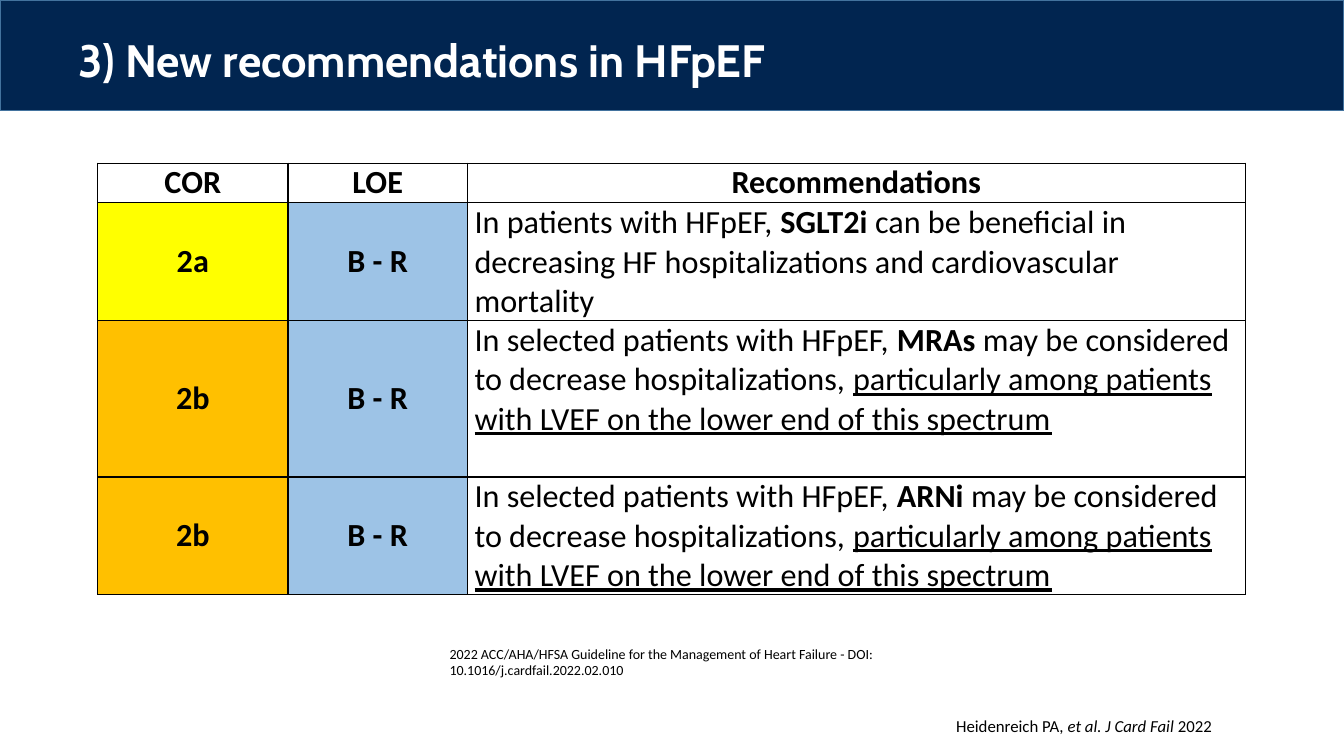
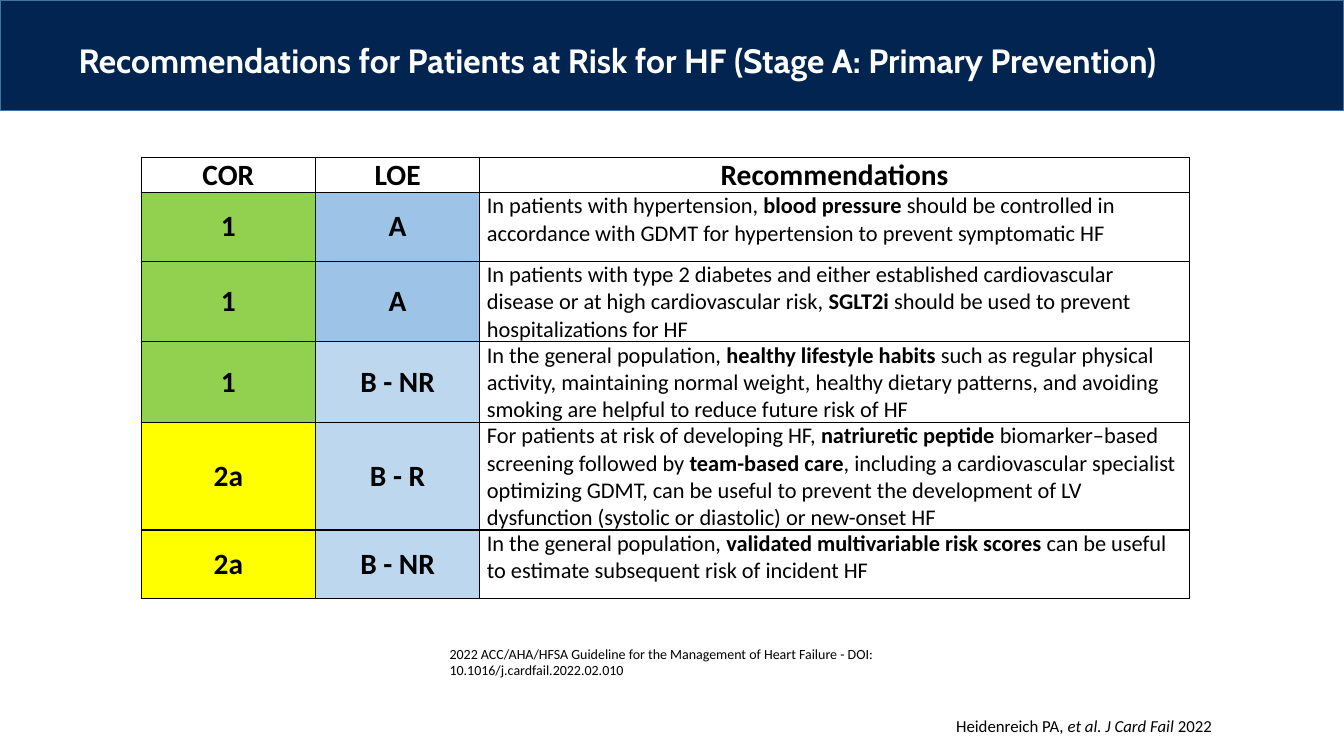
from lxml import etree
from pptx import Presentation
from pptx.dml.color import RGBColor
from pptx.enum import shapes, text
from pptx.oxml import ns
from pptx.util import Cm, Pt

NAVY = RGBColor(0x01, 0x25, 0x50)
EDGE = RGBColor(0x43, 0x73, 0x9E)
WHITE = RGBColor(0xFF, 0xFF, 0xFF)
BLACK = RGBColor(0x00, 0x00, 0x00)
GREEN = RGBColor(0x92, 0xD0, 0x50)
YELLOW = RGBColor(0xFF, 0xFF, 0x00)
ORANGE = RGBColor(0xFF, 0xC0, 0x00)
BLUE = RGBColor(0x9D, 0xC3, 0xE6)
PALE_BLUE = RGBColor(0xBD, 0xD7, 0xEE)

TITLE_FONT, BODY_FONT = "Cabin", "Calibri"
PAGE_WIDTH, PAGE_HEIGHT = Cm(33.87), Cm(19.05)
CENTER, LEFT = text.PP_ALIGN.CENTER, text.PP_ALIGN.LEFT

COR_FILLS = {"1": GREEN, "2a": YELLOW, "2b": ORANGE}
BOLD, UNDERLINE = {"bold": True}, {"underline": True}
LOWER_LVEF = ("particularly among patients with LVEF on the lower end "
              "of this spectrum", UNDERLINE)

# Each row: class, level of evidence, its fill, spans of the recommendation
HFPEF_ROWS = [
    ("2a", "B - R", BLUE, [
        ("In patients with HFpEF, ", {}), ("SGLT2i", BOLD),
        (" can be beneficial in decreasing HF hospitalizations and "
         "cardiovascular mortality", {})]),
] + [
    ("2b", "B - R", BLUE, [
        ("In selected patients with HFpEF, ", {}), (drug, BOLD),
        ("may be considered to decrease hospitalizations, ", {}), LOWER_LVEF])
    for drug in ("MRAs ", "ARNi ")
]
STAGE_A_ROWS = [
    ("1", "A", BLUE, [
        ("In patients with hypertension, ", {}), ("blood pressure ", BOLD),
        ("should be controlled in accordance with GDMT for hypertension to "
         "prevent symptomatic HF", {})]),
    ("1", "A", BLUE, [
        ("In patients with type 2 diabetes and either established "
         "cardiovascular disease or at high cardiovascular risk, ", {}),
        ("SGLT2i ", BOLD),
        ("should be used to prevent hospitalizations for HF", {})]),
    ("1", "B - NR", PALE_BLUE, [
        ("In the general population, ", {}),
        ("healthy lifestyle habits ", BOLD),
        ("such as regular physical activity, maintaining normal weight, "
         "healthy dietary patterns, and avoiding smoking are helpful to "
         "reduce future risk of HF", {})]),
    ("2a", "B - R", PALE_BLUE, [
        ("For patients at risk of developing HF, ", {}),
        ("natriuretic peptide ", BOLD),
        ("biomarker–based screening followed by ", {}),
        ("team-based care", BOLD),
        (", including a cardiovascular specialist optimizing GDMT, can be "
         "useful to prevent the development of LV dysfunction (systolic or "
         "diastolic) or new-onset HF", {})]),
    ("2a", "B - NR", PALE_BLUE, [
        ("In the general population, ", {}),
        ("validated multivariable risk scores ", BOLD),
        ("can be useful to estimate subsequent risk of incident HF", {})]),
]


def add_span(para, words, size=12, font=BODY_FONT, color=BLACK, bold=False,
             italic=False, underline=False):
    span = para.add_run()
    span.text = words
    span.font.size, span.font.name = Pt(size), font
    span.font.color.rgb = color
    span.font.bold, span.font.italic = bold, italic
    span.font.underline = underline


def add_box(page, left, top, width, height):
    """Add a wrapping text box and return its frame."""
    frame = page.shapes.add_textbox(left, top, width, height).text_frame
    frame.word_wrap = True
    return frame


def add_title_band(page, title, size, title_top):
    band = page.shapes.add_shape(shapes.MSO_SHAPE.RECTANGLE, 0, 0,
                                 PAGE_WIDTH, Cm(2.79))
    band.shadow.inherit = False
    band.fill.solid()
    band.fill.fore_color.rgb = NAVY
    band.line.color.rgb, band.line.width = EDGE, Pt(1)

    frame = add_box(page, Cm(1.98), title_top, Cm(29.97), Cm(2.06))
    frame.margin_left = frame.margin_top = frame.margin_bottom = 0
    para = frame.paragraphs[0]
    para.line_spacing = 0.9
    add_span(para, title, size=size, font=TITLE_FONT, color=WHITE, bold=True)


def add_footer(page):
    # Journal credit at the lower right
    para = add_box(page, Cm(23.55), Cm(17.96), Cm(7.54),
                   Cm(1.22)).paragraphs[0]
    para.alignment, para.line_spacing = CENTER, 0.9
    add_span(para, "Heidenreich PA, ")
    add_span(para, "et al. J Card Fail ", italic=True)
    add_span(para, "2022")

    # Guideline reference, indented
    para = add_box(page, Cm(6), Cm(16.13), Cm(19.89), Cm(0.69)).paragraphs[0]
    para._p.get_or_add_pPr().set("marL", str(Cm(5.08)))
    add_span(para, "2022 ACC/AHA/HFSA Guideline for the Management of Heart "
             "Failure - DOI: 10.1016/j.cardfail.2022.02.010", size=10)


def draw_borders(cell):
    properties = cell._tc.get_or_add_tcPr()
    for side in ("a:lnL", "a:lnR", "a:lnT", "a:lnB"):
        line = etree.SubElement(properties, ns.qn(side), w=str(Pt(1)))
        fill = etree.SubElement(line, ns.qn("a:solidFill"))
        etree.SubElement(fill, ns.qn("a:srgbClr"), val=str(BLACK))


def fill_cell(cell, spans, size, fill=None, align=CENTER,
              anchor=text.MSO_ANCHOR.MIDDLE):
    cell.margin_left = cell.margin_right = Cm(0.18)
    cell.margin_top = cell.margin_bottom = 0
    cell.vertical_anchor = anchor
    draw_borders(cell)
    if fill is None:
        cell.fill.background()
    else:
        cell.fill.solid()
        cell.fill.fore_color.rgb = fill
    para = cell.text_frame.paragraphs[0]
    para.alignment = align
    for words, style in spans:
        add_span(para, words, size=size, **style)


def add_recommendations(page, left, top, widths, heights, rows, label_size,
                        body_size):
    table = page.shapes.add_table(
        len(heights), len(widths), left, top, sum(widths), sum(heights)).table
    table.first_row = table.horz_banding = False
    for column, width in zip(table.columns, widths):
        column.width = width
    for row, height in zip(table.rows, heights):
        row.height = height

    # Header row
    for index, (label, fill) in enumerate(
            [("COR", WHITE), ("LOE", WHITE), ("Recommendations", None)]):
        fill_cell(table.cell(0, index), [(label, BOLD)], label_size, fill)

    # One row for each recommendation
    for index, (cor, loe, loe_fill, spans) in enumerate(rows, start=1):
        fill_cell(table.cell(index, 0), [(cor, BOLD)], label_size,
                  COR_FILLS[cor])
        fill_cell(table.cell(index, 1), [(loe, BOLD)], label_size, loe_fill)
        fill_cell(table.cell(index, 2), spans, body_size, align=LEFT,
                  anchor=text.MSO_ANCHOR.TOP)


def add_page(deck, title, title_size, title_top, **table_format):
    page = deck.slides.add_slide(deck.slide_layouts[6])
    add_title_band(page, title, title_size, title_top)
    add_recommendations(page, **table_format)
    add_footer(page)


def main():
    deck = Presentation()
    deck.slide_width, deck.slide_height = PAGE_WIDTH, PAGE_HEIGHT
    add_page(deck, "3) New recommendations in HFpEF", 32.4, Cm(0.97),
             left=Cm(2.46), top=Cm(4.11),
             widths=[Cm(4.8), Cm(4.52), Cm(19.61)],
             heights=[Cm(1), Cm(2.97), Cm(3.94), Cm(2.97)],
             rows=HFPEF_ROWS, label_size=23, body_size=23)
    add_page(deck, "Recommendations for Patients at Risk for HF "
             "(Stage A: Primary Prevention)", 24, Cm(1.12),
             left=Cm(3.56), top=Cm(3.96),
             widths=[Cm(4.39), Cm(4.14), Cm(17.88)],
             heights=[Cm(0.89), Cm(1.73), Cm(2.03), Cm(2.03), Cm(2.69),
                      Cm(1.73)],
             rows=STAGE_A_ROWS, label_size=21, body_size=16)
    deck.save("out.pptx")


if __name__ == "__main__":
    main()
